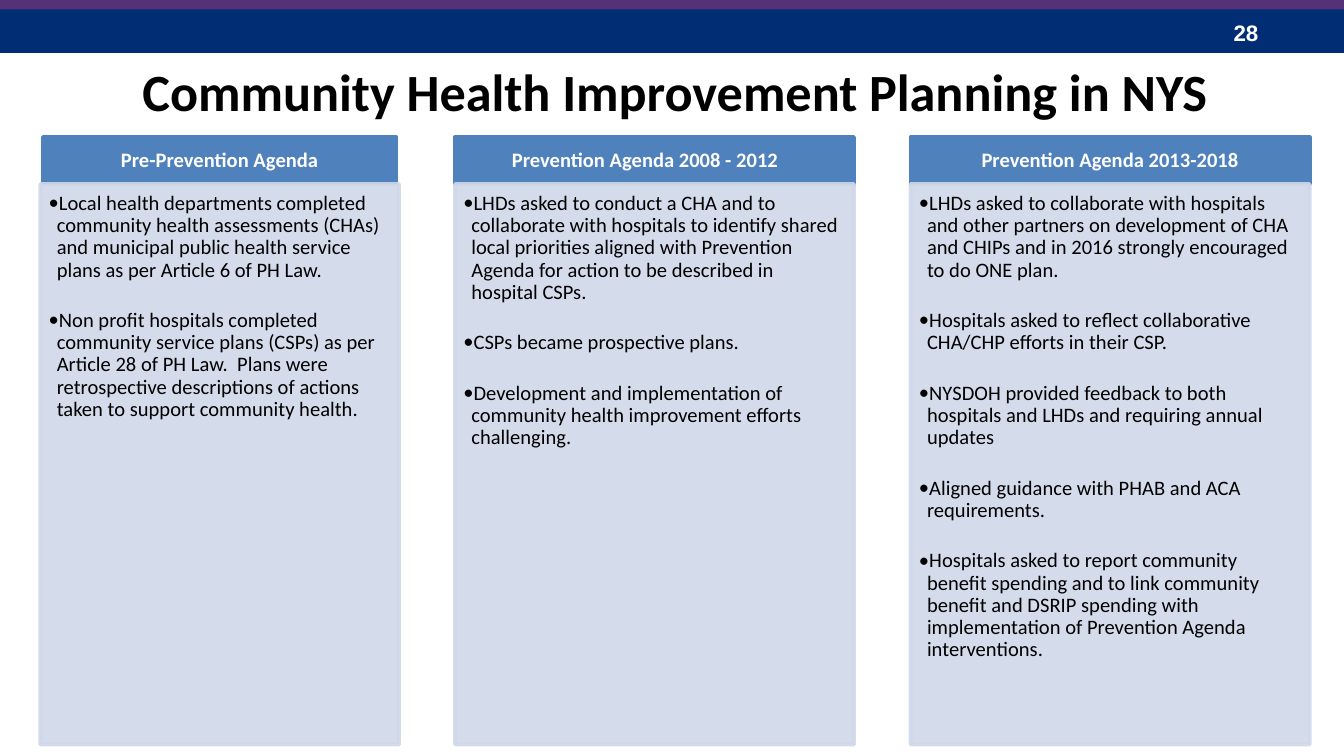
from lxml import etree
from pptx import Presentation
from pptx.dml.color import RGBColor
from pptx.enum.shapes import MSO_SHAPE
from pptx.enum.text import MSO_ANCHOR, PP_ALIGN
from pptx.oxml.ns import qn
from pptx.util import Inches, Pt

RECT = MSO_SHAPE.RECTANGLE
TOP, MIDDLE = MSO_ANCHOR.TOP, MSO_ANCHOR.MIDDLE
LEFT, CENTER = PP_ALIGN.LEFT, PP_ALIGN.CENTER
COLORS = {
    "navy": "002D73", "purple": "553278", "blue": "4F81BD",
    "pale": "D0D8E8", "white": "FFFFFF", "black": "000000",
}
COLUMNS = [
    ("Pre-Prevention Agenda", (3.2, 26.3), (3, 26.7), 0.9, [
        "Local health departments completed community health assessments (CHAs) and "
        "municipal public health service plans as per Article 6 of PH Law.",
        "Non profit hospitals completed community service plans (CSPs) as per Article 28 "
        "of PH Law.  Plans were retrospective descriptions of actions taken to support "
        "community health.",
    ]),
    ("Prevention Agenda 2008 - 2012", (33.85, 29.7), (33.85, 29.7), 2.3, [
        "LHDs asked to conduct a CHA and to collaborate with hospitals to identify shared "
        "local priorities aligned with Prevention Agenda for action to be described in "
        "hospital CSPs.",
        "CSPs became prospective plans.",
        "Development and implementation of community health improvement efforts "
        "challenging.",
    ]),
    ("Prevention Agenda 2013-2018", (67.75, 29.7), (67.75, 29.7), 0.9, [
        "LHDs asked to collaborate with hospitals and other partners on development of CHA "
        "and CHIPs and in 2016 strongly encouraged to do ONE plan.",
        "Hospitals asked to reflect collaborative CHA/CHP efforts in their CSP.",
        "NYSDOH provided feedback to both hospitals and LHDs and requiring annual updates",
        "Aligned guidance with PHAB and ACA requirements.",
        "Hospitals asked to report community benefit spending and to link community "
        "benefit and DSRIP spending with implementation of Prevention Agenda "
        "interventions.",
    ]),
]


def rgb(name):
    """Return a named colour."""
    return RGBColor.from_string(COLORS[name])


def write(p, text, size=11, color="black", bold=False, font="Calibri",
          align=LEFT, spacing=None, after=0, bullet=None):
    """Fill a paragraph with formatted text."""
    p.alignment = align
    p.space_after = Pt(after)
    if spacing:
        p.line_spacing = spacing
    if bullet:
        pPr = p._p.get_or_add_pPr()
        pPr.set("marL", str(Inches(0.06)))
        pPr.set("indent", str(-Inches(0.06)))
        etree.SubElement(pPr, qn("a:buFont")).set("typeface", font)
        etree.SubElement(pPr, qn("a:buChar")).set("char", bullet)
    r = p.add_run()
    r.text = text
    r.font.name, r.font.size, r.font.bold = font, Pt(size), bold
    r.font.color.rgb = rgb(color)


class Deck:
    """Draw elements on a grid of 100 columns with square cells."""

    def __init__(self, prs):
        """Set the slide size and add a blank slide."""
        prs.slide_width = Inches(10)
        prs.slide_height = prs.slide_width * 9 // 16
        self.unit = prs.slide_width / 100
        self.s = prs.slides.add_slide(prs.slide_layouts[6])

    def grid(self, *cells):
        """Convert grid cells to slide lengths."""
        return [round(c * self.unit) for c in cells]

    def frame(self, sp, insets, anchor=TOP):
        """Prepare the text frame of a shape."""
        tf = sp.text_frame
        tf.word_wrap, tf.vertical_anchor = True, anchor
        (tf.margin_left, tf.margin_top,
         tf.margin_right, tf.margin_bottom) = self.grid(*insets)
        return tf

    def rect(self, cells, color, outline=False, alpha=None):
        """Add a filled rectangle."""
        sp = self.s.shapes.add_shape(RECT, *self.grid(*cells))
        sp.shadow.inherit = False
        sp.fill.solid()
        sp.fill.fore_color.rgb = rgb(color)
        if outline:
            sp.line.color.rgb = rgb(color)
            sp.line.width = Pt(2)
        else:
            sp.line.fill.background()
        if alpha:
            for clr in sp._element.spPr.iter(qn("a:srgbClr")):
                etree.SubElement(clr, qn("a:alpha")).set("val", str(alpha * 1000))
        return sp

    def label(self, cells, text, insets=(1, 0.45, 1, 0.5), **fmt):
        """Add a text box with one paragraph."""
        sp = self.s.shapes.add_textbox(*self.grid(*cells))
        write(self.frame(sp, insets).paragraphs[0], text, **fmt)

    def heading(self, cells, text, right):
        """Add a column heading."""
        sp = self.rect(cells, "blue", outline=True)
        tf = self.frame(sp, (0.9, 0.5, right, 0.5), MIDDLE)
        write(tf.paragraphs[0], text, color="white", bold=True, align=CENTER, spacing=0.9)

    def bullets(self, cells, items):
        """Add a pale panel with a bulleted list."""
        sp = self.rect(cells, "pale", outline=True, alpha=90)
        tf = self.frame(sp, (0.63, 0.65, 0.9, 1))
        for i, item in enumerate(items):
            p = tf.add_paragraph() if i else tf.paragraphs[0]
            write(p, item, spacing=0.9, after=15.2, bullet="•")


def main():
    """Build and save the slide."""
    prs = Presentation()
    deck = Deck(prs)
    deck.rect((0, 0.65, 100, 3.3), "navy")
    deck.rect((0, -0.2, 100, 0.9), "purple")
    deck.label((90.8, 1, 7.5, 3), "28", size=12, color="white", bold=True, font="Arial")
    deck.label((4.9, 3.9, 90.6, 4.9), "Community Health Improvement Planning in NYS",
               insets=(1, 0.5, 1, 0), size=28, bold=True, align=CENTER)
    for title, (hx, hw), (bx, bw), right, items in COLUMNS:
        deck.heading((hx, 10.2, hw, 3.5), title, right)
        deck.bullets((bx, 13.7, bw, 41.7), items)
    prs.save("out.pptx")


if __name__ == "__main__":
    main()
